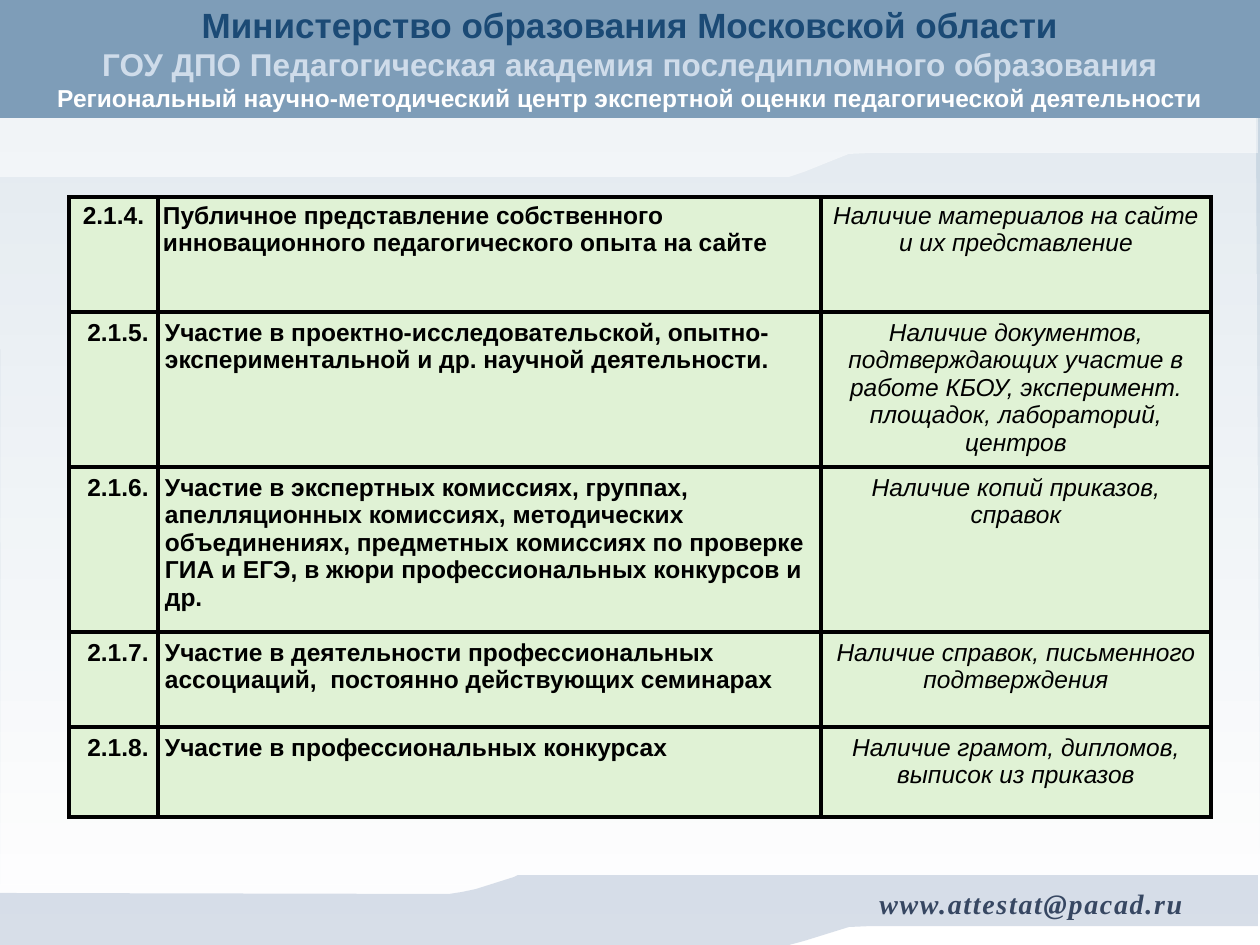
from lxml.etree import SubElement
from pptx import Presentation
from pptx.dml.color import RGBColor
from pptx.enum.shapes import MSO_SHAPE
from pptx.enum.text import MSO_ANCHOR, MSO_AUTO_SIZE, PP_ALIGN
from pptx.oxml.ns import qn
from pptx.util import Emu, Pt

SCALE = 914400 / 126
WIDTH, HEIGHT = 1260, 945
COLORS = {
    "sky": "C1D0DD",
    "white": "FFFFFF",
    "header": "7E9DB8",
    "ministry": "1B4A75",
    "academy": "CFDCEA",
    "footer": "B0BED3",
    "address": "374762",
    "cell": "E0F2D5",
    "black": "000000",
}
HEADER_LINES = [
    ("Министерство образования Московской области", 20, "ministry"),
    ("ГОУ ДПО Педагогическая академия последипломного образования", 18, "academy"),
    ("Региональный научно-методический центр экспертной оценки педагогической деятельности", 14, "white"),
]
WAVE = [
    (1258, 2), (537, 2), (518, 1), (514, 4), (476, 21), (462, 26), (449, 28),
    (0, 27), (0, 100), (789, 100), (804, 94), (849, 74), (872, 73), (1258, 73),
]
COLUMN_WIDTHS = [89, 663, 390]
ROW_HEIGHTS = [115, 155, 165, 95, 90]
CRITERIA = [
    ("2.1.4.", "Публичное представление собственного инновационного педагогического опыта на сайте",
     "Наличие материалов на сайте и их представление"),
    ("2.1.5.", "Участие в проектно-исследовательской, опытно-экспериментальной и др. научной деятельности.",
     "Наличие документов, подтверждающих участие в работе КБОУ, эксперимент. площадок, лабораторий, центров"),
    ("2.1.6.", "Участие в экспертных комиссиях, группах, апелляционных комиссиях, методических объединениях, "
     "предметных комиссиях по проверке ГИА и ЕГЭ, в жюри профессиональных конкурсов и др.",
     "Наличие копий приказов, справок"),
    ("2.1.7.", "Участие в деятельности профессиональных ассоциаций,  постоянно действующих семинарах",
     "Наличие справок, письменного подтверждения"),
    ("2.1.8.", "Участие в профессиональных конкурсах",
     "Наличие грамот, дипломов, выписок из приказов"),
]


def px(value):
    return Emu(round(value * SCALE))


def color(name):
    return RGBColor.from_string(COLORS[name])


class SlideBuilder:
    font = "Arial"

    def __init__(self, slide):
        self.slide = slide

    def background(self, top, bottom):
        fill = self.slide.background.fill
        fill.gradient()
        fill.gradient_angle = 270
        for stop, name in zip(fill.gradient_stops, (top, bottom)):
            stop.color.rgb = color(name)

    def paint(self, shape, fill, opacity=100):
        shape.shadow.inherit = False
        shape.fill.solid()
        shape.fill.fore_color.rgb = color(fill)
        shape.line.fill.background()
        if opacity < 100:
            value = shape.element.spPr.find(qn("a:solidFill"))[0]
            SubElement(value, qn("a:alpha"), val=str(opacity * 1000))

    def rectangle(self, left, top, width, height, fill):
        shape = self.slide.shapes.add_shape(
            MSO_SHAPE.RECTANGLE, px(left), px(top), px(width), px(height))
        self.paint(shape, fill)

    def outline(self, points, fill, opacity):
        builder = self.slide.shapes.build_freeform(*points[0], scale=SCALE)
        builder.add_line_segments(points[1:], close=True)
        self.paint(builder.convert_to_shape(), fill, opacity)

    def wave(self, top, height, fill):
        points = [(x, round(top + height * share / 100)) for x, share in WAVE]
        self.outline(points, fill, 50)

    def format(self, paragraph, size, name, align, bold=True, italic=False, font=None):
        paragraph.alignment = align
        for run in paragraph.runs:
            run.font.name = font or self.font
            run.font.size = Pt(size)
            run.font.bold = bold
            run.font.italic = italic
            run.font.color.rgb = color(name)

    def frame(self, shape):
        text_frame = shape.text_frame
        text_frame.word_wrap = True
        text_frame.auto_size = MSO_AUTO_SIZE.NONE
        text_frame.vertical_anchor = MSO_ANCHOR.MIDDLE
        text_frame.margin_left = text_frame.margin_right = 0
        text_frame.margin_top = text_frame.margin_bottom = 0
        return text_frame

    def title(self, left, top, width, height, lines):
        shape = self.slide.shapes.title
        shape.element.getparent().append(shape.element)
        shape.left, shape.top, shape.width, shape.height = map(px, (left, top, width, height))
        text_frame = self.frame(shape)
        text_frame.text = "\n".join(text for text, size, name in lines)
        for paragraph, (text, size, name) in zip(text_frame.paragraphs, lines):
            self.format(paragraph, size, name, PP_ALIGN.CENTER)

    def address(self, left, top, width, height, text):
        shape = self.slide.shapes.add_textbox(px(left), px(top), px(width), px(height))
        text_frame = self.frame(shape)
        text_frame.text = text
        paragraph = text_frame.paragraphs[0]
        self.format(paragraph, 16, "address", PP_ALIGN.RIGHT, italic=True, font="Times New Roman")
        paragraph.runs[0].font.element.set("spc", "100") if hasattr(
            paragraph.runs[0].font, "element") else paragraph.runs[0]._r.get_or_add_rPr().set("spc", "100")

    def borders(self, cell):
        properties = cell._tc.get_or_add_tcPr()
        for index, side in enumerate(("a:lnL", "a:lnR", "a:lnT", "a:lnB")):
            line = properties.makeelement(qn(side), {"w": str(Pt(2.25))})
            fill = SubElement(line, qn("a:solidFill"))
            SubElement(fill, qn("a:srgbClr"), val=COLORS["black"])
            properties.insert(index, line)

    def cell(self, cell, text, margin, align, italic, indent):
        cell.fill.solid()
        cell.fill.fore_color.rgb = color("cell")
        cell.margin_left = cell.margin_right = px(margin)
        cell.margin_top = cell.margin_bottom = px(margin)
        cell.text_frame.text = text
        paragraph = cell.text_frame.paragraphs[0]
        self.format(paragraph, 14, "black", align, bold=not italic, italic=italic)
        if indent:
            paragraph._p.get_or_add_pPr().set("indent", str(px(indent)))
        self.borders(cell)

    def table(self, left, top, widths, heights, rows):
        table = self.slide.shapes.add_table(
            len(heights), len(widths), px(left), px(top), px(sum(widths)), px(sum(heights))).table
        table.first_row = table.horz_banding = False
        for column, width in zip(table.columns, widths):
            column.width = px(width)
        for row, height in zip(table.rows, heights):
            row.height = px(height)
        for row_index, texts in enumerate(rows):
            for column_index, text in enumerate(texts):
                self.cell(
                    table.cell(row_index, column_index), text,
                    margin=7 if row_index else 5,
                    align=PP_ALIGN.LEFT if column_index == 1 else PP_ALIGN.CENTER,
                    italic=column_index == 2,
                    indent=9 if row_index and column_index == 0 else 0)


def main():
    presentation = Presentation()
    presentation.slide_width, presentation.slide_height = px(WIDTH), px(HEIGHT)
    builder = SlideBuilder(presentation.slides.add_slide(presentation.slide_layouts[5]))
    builder.background("sky", "white")
    builder.outline([(1, 885), (1260, 886), (1256, 118), (0, 118)], "white", 50)
    builder.wave(88, 89, "white")
    builder.rectangle(0, 0, WIDTH, 118, "header")
    builder.title(0, 4, WIDTH, 108, HEADER_LINES)
    builder.wave(874, 71, "footer")
    builder.address(780, 887, 403, 32, "www.attestat@pacad.ru")
    builder.table(69, 197, COLUMN_WIDTHS, ROW_HEIGHTS, CRITERIA)
    presentation.save("out.pptx")


if __name__ == "__main__":
    main()
